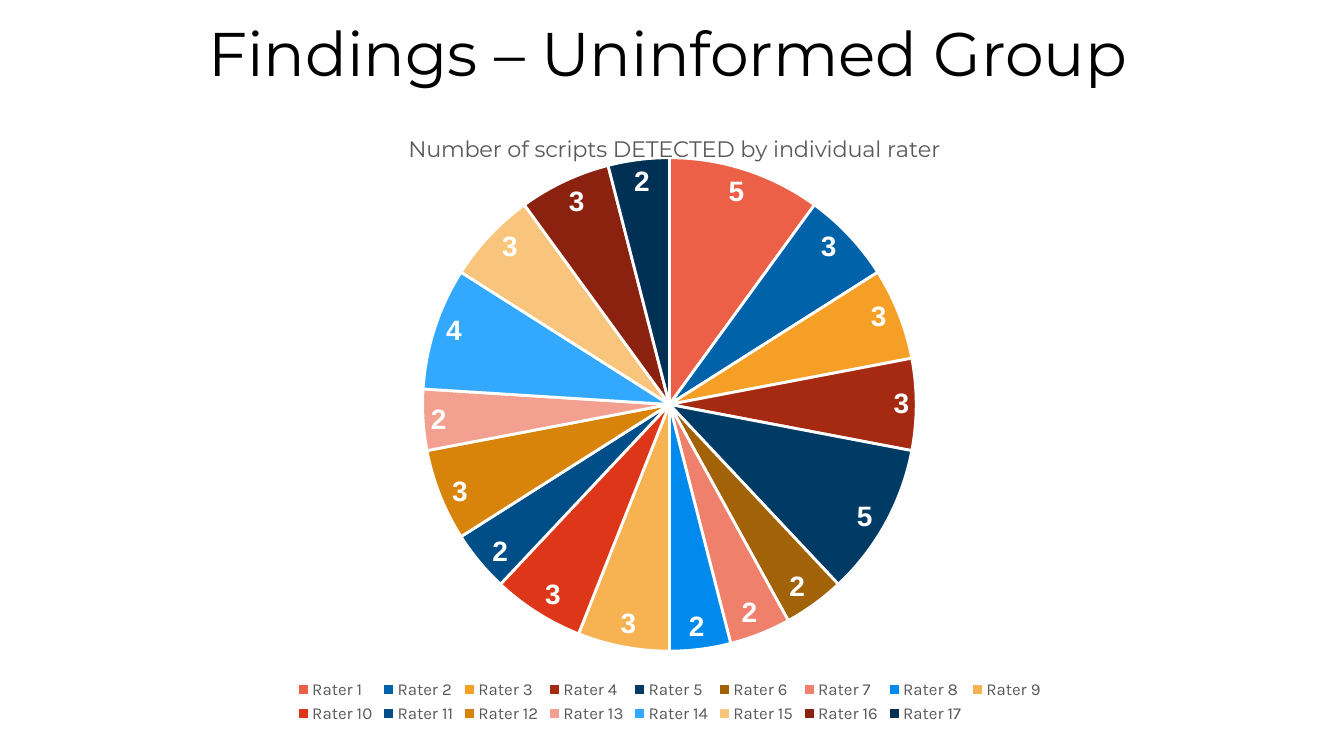
"""Build a slide with a pie chart of scripts detected by each rater."""
from lxml.etree import SubElement
from pptx import Presentation
from pptx.chart.data import CategoryChartData
from pptx.dml.color import RGBColor
from pptx.enum.chart import XL_CHART_TYPE as ChartType
from pptx.enum.chart import XL_LABEL_POSITION as LabelPosition
from pptx.enum.chart import XL_LEGEND_POSITION as LegendPosition
from pptx.enum.text import MSO_ANCHOR as Anchor
from pptx.enum.text import PP_ALIGN as Align
from pptx.oxml.ns import qn
from pptx.util import Inches, Pt

HEADING = "Findings – Uninformed Group"
CHART_TITLE = "Number of scripts DETECTED by individual rater"
DETECTED = [5, 3, 3, 3, 5, 2, 2, 2, 3, 3, 2, 3, 2, 4, 3, 3, 2]
SLICE_COLORS = [
    "EB6047", "0062A9", "F59F26", "A62912", "003B65", "A26207",
    "EF806C", "008AED", "F7B251", "DD3618", "004E87", "D8830A",
    "F3A091", "32A9FF", "F9C57D", "8A220F", "003154",
]
HEADING_BOX = (0.92, 0.02, 11.41, 1.08)
CHART_BOX = (0.38, 1.1, 12.52, 6.12)
PLOT_AREA = {"x": 0, "y": 0.076, "w": 1, "h": 0.8}
TITLE_PLACE = {"x": 0.29, "y": 0.03}
THEME = {
    "heading": {"font": "Montserrat", "size": 44, "color": "000000"},
    "title": {"font": "Montserrat", "size": 16, "color": "595959", "bold": False},
    "legend": {"font": "Karla", "size": 12, "color": "595959"},
    "chart": {"font": "Karla", "size": 10, "color": "000000"},
    "label": {"font": "Arial", "size": 20, "color": "FFFFFF", "bold": True},
    "edge": "FFFFFF",
}


def style_font(target, font, size, color, bold=None):
    """Apply one theme style to a font."""
    target.name, target.size, target.bold = font, Pt(size), bold
    target.color.rgb = RGBColor.from_string(color)


def write_text(frame, text, align=Align.CENTER, spacing=None, **style):
    """Write one formatted paragraph into a text frame."""
    para = frame.paragraphs[0]
    para.alignment, para.line_spacing = align, spacing
    span = para.add_run()
    span.text = text
    style_font(span.font, **style)


def place(element, fractions, before=None, inner=False):
    """Give a chart part a manual layout in fractions of the chart."""
    for old in element.findall(qn("c:layout")):
        element.remove(old)
    layout = SubElement(element, qn("c:layout"))
    if before is not None:
        before.addprevious(layout)
    manual = SubElement(layout, qn("c:manualLayout"))
    if inner:
        SubElement(manual, qn("c:layoutTarget")).set("val", "inner")
    for axis in ("x", "y"):
        SubElement(manual, qn(f"c:{axis}Mode")).set("val", "edge")
    for name, value in fractions.items():
        SubElement(manual, qn(f"c:{name}")).set("val", str(value))


def add_heading(page):
    """Add the slide heading."""
    box = page.shapes.add_textbox(*map(Inches, HEADING_BOX))
    frame = box.text_frame
    frame.word_wrap, frame.vertical_anchor = True, Anchor.MIDDLE
    write_text(frame, HEADING, spacing=0.9, **THEME["heading"])


def add_pie(page):
    """Add the pie chart with its title, labels and legend."""
    data = CategoryChartData()
    data.categories = [f"Rater {n}" for n in range(1, len(DETECTED) + 1)]
    data.add_series("Series 1", DETECTED)
    chart = page.shapes.add_chart(
        ChartType.PIE, *map(Inches, CHART_BOX), data
    ).chart
    style_font(chart.font, **THEME["chart"])

    chart.has_title = True
    title = chart.chart_title
    write_text(title.text_frame, CHART_TITLE, **THEME["title"])
    title_xml = title.format.element if hasattr(title.format, "element") else (
        chart.element.find(f".//{qn('c:title')}")
    )
    place(title_xml, TITLE_PLACE, before=title_xml.find(qn("c:overlay")))

    chart.has_legend = True
    chart.legend.position = LegendPosition.BOTTOM
    chart.legend.include_in_layout = False
    style_font(chart.legend.font, **THEME["legend"])

    plot = chart.plots[0]
    plot.vary_by_categories = True
    plot_xml = chart.element.find(f".//{qn('c:plotArea')}")
    place(plot_xml, PLOT_AREA, before=plot_xml.find(qn("c:pieChart")), inner=True)

    series = plot.series[0]
    for index, color in enumerate(SLICE_COLORS):
        look = series.points[index].format
        look.fill.solid()
        look.fill.fore_color.rgb = RGBColor.from_string(color)
        look.line.color.rgb = RGBColor.from_string(THEME["edge"])
        look.line.width = Pt(2)

    labels = series.data_labels
    labels.show_value = True
    labels.position = LabelPosition.BEST_FIT
    style_font(labels.font, **THEME["label"])


def main():
    """Create and save the deck."""
    deck = Presentation()
    deck.slide_width, deck.slide_height = Inches(13.33), Inches(7.5)
    page = deck.slides.add_slide(deck.slide_layouts[6])
    add_heading(page)
    add_pie(page)
    deck.save("out.pptx")


if __name__ == "__main__":
    main()
